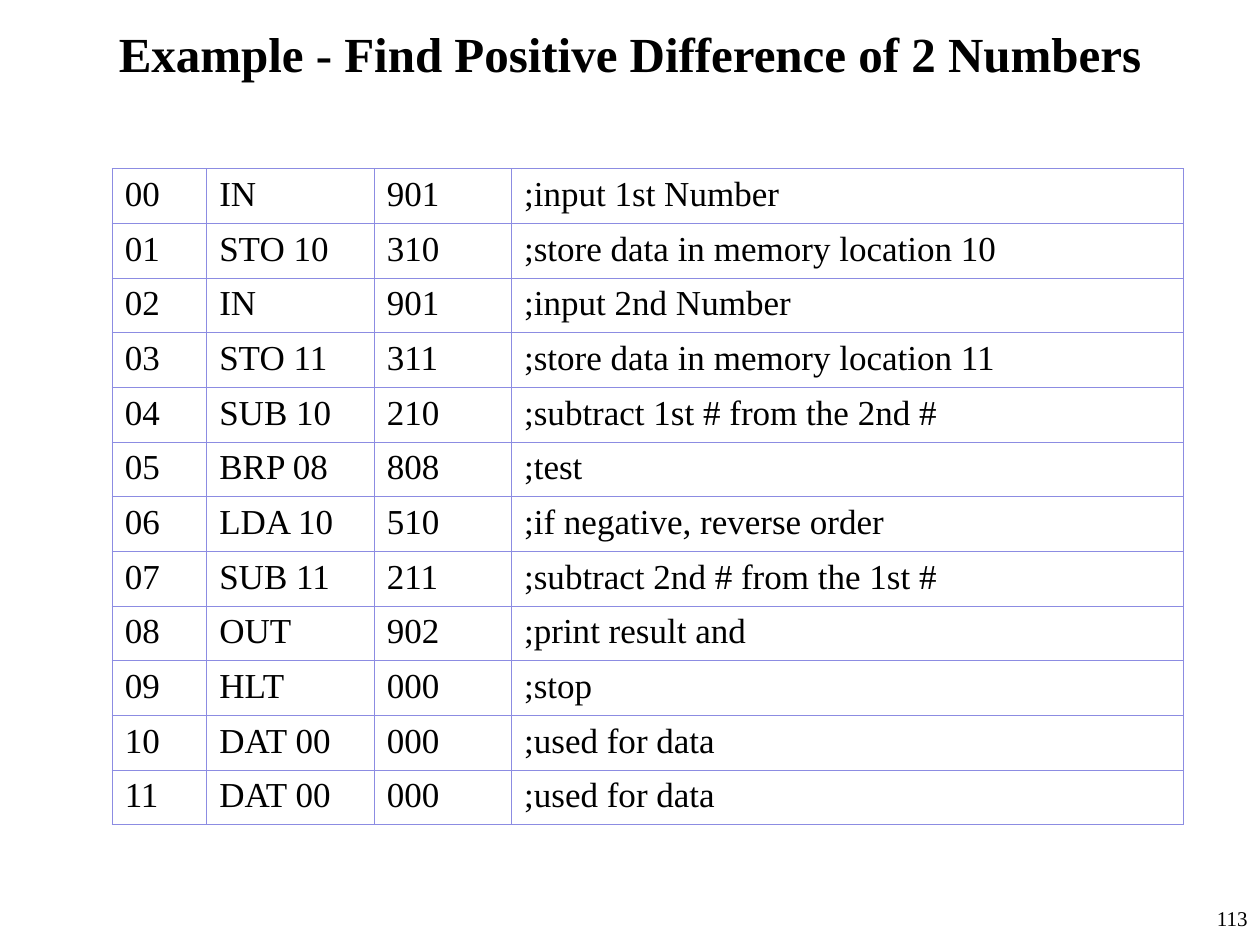
from lxml import etree
from pptx import Presentation
from pptx import util as u
from pptx.dml.color import RGBColor
from pptx.enum import text
from pptx.oxml import parse_xml
from pptx.oxml.ns import nsdecls

FONT = "Times New Roman"
BLACK = "000000"
BORDER = "8C8CE2"
COLUMN_WIDTHS = (0.75, 1.33, 1.09, 5.33)
ROW_HEIGHT = 5.2 / 12
PROGRAM = (
    ("IN", "901", ";input 1st Number"),
    ("STO 10", "310", ";store data in memory location 10"),
    ("IN", "901", ";input 2nd Number"),
    ("STO 11", "311", ";store data in memory location 11"),
    ("SUB 10", "210", ";subtract 1st # from the 2nd #"),
    ("BRP 08", "808", ";test"),
    ("LDA 10", "510", ";if negative, reverse order"),
    ("SUB 11", "211", ";subtract 2nd # from the 1st #"),
    ("OUT", "902", ";print result and"),
    ("HLT", "000", ";stop"),
    ("DAT 00", "000", ";used for data"),
    ("DAT 00", "000", ";used for data"),
)


def color(value):
    return RGBColor.from_string(value)


def write(tf, content, size=20, bold=False, align=text.PP_ALIGN.LEFT):
    tf.word_wrap = True
    p = tf.paragraphs[0]
    p.alignment = align
    r = p.add_run()
    r.text = content
    r.font.name = FONT
    r.font.size = u.Pt(size)
    r.font.bold = bold
    r.font.color.rgb = color(BLACK)


def add_text(s, box, content, anchor=text.MSO_ANCHOR.TOP, **fmt):
    sp = s.shapes.add_textbox(*map(u.Inches, box))
    sp.text_frame.vertical_anchor = anchor
    write(sp.text_frame, content, **fmt)


def add_borders(cell, value, width=0.75):
    tc_pr = cell._tc.get_or_add_tcPr()
    for i, side in enumerate(("lnL", "lnR", "lnT", "lnB")):
        ln = parse_xml(f'<a:{side} {nsdecls("a")} w="{u.Pt(width)}"/>')
        fill = etree.SubElement(ln, f"{{{ln.nsmap['a']}}}solidFill")
        etree.SubElement(fill, f"{{{ln.nsmap['a']}}}srgbClr", val=value)
        tc_pr.insert(i, ln)


def add_listing(s, left, top):
    size = (sum(COLUMN_WIDTHS), ROW_HEIGHT * len(PROGRAM))
    frame = s.shapes.add_table(len(PROGRAM), len(COLUMN_WIDTHS),
                               *map(u.Inches, (left, top, *size)))
    table = frame.table
    table.first_row = table.horz_banding = False
    for column, width in zip(table.columns, COLUMN_WIDTHS):
        column.width = u.Inches(width)
    for i, instruction in enumerate(PROGRAM):
        table.rows[i].height = u.Inches(ROW_HEIGHT)
        for j, content in enumerate((f"{i:02d}", *instruction)):
            cell = table.cell(i, j)
            cell.fill.background()
            add_borders(cell, BORDER)
            write(cell.text_frame, content)


def main():
    prs = Presentation()
    prs.slide_width, prs.slide_height = u.Inches(10), u.Inches(7.5)
    s = prs.slides.add_slide(prs.slide_layouts[6])
    add_text(s, (7.92, 7.14, 2.08, 0.36), "113", size=12,
             align=text.PP_ALIGN.RIGHT)
    add_text(s, (0, 0, 10, 0.84),
             "Example - Find Positive Difference of 2 Numbers",
             anchor=text.MSO_ANCHOR.MIDDLE, size=28, bold=True,
             align=text.PP_ALIGN.CENTER)
    add_listing(s, 0.89, 1.34)
    prs.save("out.pptx")


if __name__ == "__main__":
    main()
